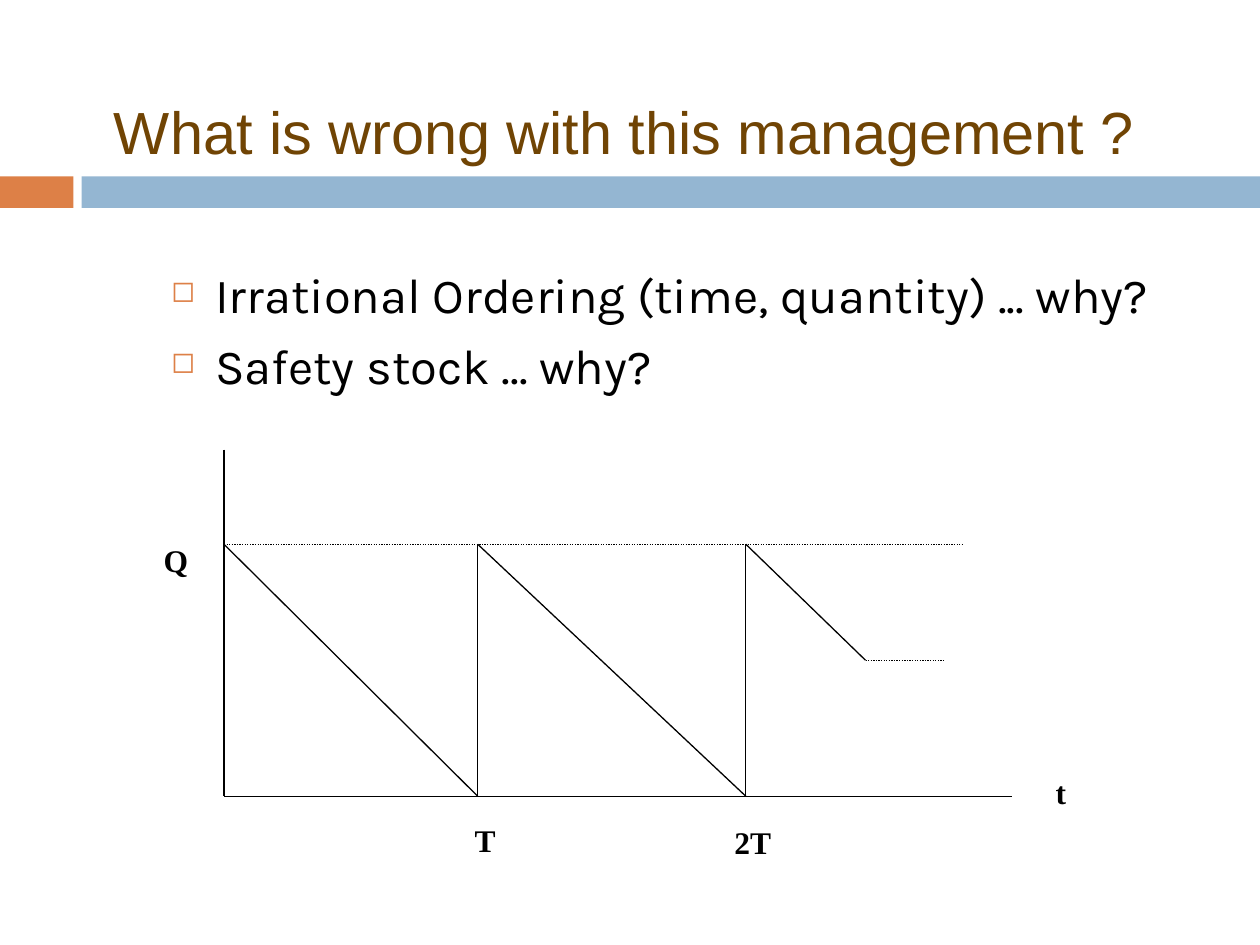
from lxml import etree
from pptx import Presentation
from pptx.dml.color import RGBColor
from pptx.enum import dml, shapes, text
from pptx.oxml import ns
from pptx.util import Pt

COLORS = {"accent": "DD8047", "band": "94B6D2", "title": "704404", "ink": "000000"}


def add_text(lines, left, top, width, height, font="Times New Roman", size=18,
             color="ink", bold=False, align=text.PP_ALIGN.CENTER, before=0, bullet=None):
    box = slide.shapes.add_textbox(Pt(left), Pt(top), Pt(width), Pt(height))
    frame = box.text_frame
    frame.word_wrap = True
    frame.text = lines
    for paragraph in frame.paragraphs:
        paragraph.alignment = align
        paragraph.space_before = Pt(before)
        for run in paragraph.runs:
            run.font.name = font
            run.font.size = Pt(size)
            run.font.bold = bold
            run.font.color.rgb = RGBColor.from_string(COLORS[color])
        if bullet:
            properties = paragraph._p.get_or_add_pPr()
            properties.set("marL", str(Pt(25.2)))
            properties.set("indent", str(Pt(-25.2)))
            marks = etree.fromstring(
                f'<a:marks {ns.nsdecls("a")}>'
                f'<a:buClr><a:srgbClr val="{COLORS["accent"]}"/></a:buClr>'
                f'<a:buSzPct val="60000"/><a:buChar char="{bullet}"/></a:marks>')
            properties.extend(list(marks))


presentation = Presentation()
presentation.slide_width, presentation.slide_height = Pt(720), Pt(540)
slide = presentation.slides.add_slide(presentation.slide_layouts[6])

for left, width, color in [(0, 42, "accent"), (46.6, 673.4, "band")]:
    shape = slide.shapes.add_shape(
        shapes.MSO_SHAPE.RECTANGLE, Pt(left), Pt(100.8), Pt(width), Pt(18))
    shape.shadow.inherit = False
    shape.fill.solid()
    shape.fill.fore_color.rgb = RGBColor.from_string(COLORS[color])
    shape.line.fill.background()

add_text("Irrational Ordering (time, quantity) ... why?\nSafety stock ... why?",
         90.7, 147.6, 612, 367.2, font="Karla", size=28,
         align=text.PP_ALIGN.JUSTIFY, before=7, bullet="◻")

origin, first_order, second_order = 128, 273, 426.2
axis_top, full_stock, empty_stock, last_stock = 257, 311, 455, 377.3
last_time = 494.6
solid_lines = [
    (origin, axis_top, origin, empty_stock),
    (origin, empty_stock, 578.2, empty_stock),
    (origin, full_stock, first_order, empty_stock),
    (first_order, empty_stock, first_order, full_stock),
    (first_order, full_stock, second_order, empty_stock),
    (second_order, empty_stock, second_order, full_stock),
    (second_order, full_stock, last_time, last_stock),
]
dotted_lines = [
    (origin, full_stock, 550.8, full_stock),
    (last_time, last_stock, 539.3, last_stock),
]
for ends in solid_lines + dotted_lines:
    connector = slide.shapes.add_connector(
        shapes.MSO_CONNECTOR.STRAIGHT, *[Pt(value) for value in ends])
    connector.line.color.rgb = RGBColor.from_string(COLORS["ink"])
    connector.line.width = Pt(0.75)
    if ends in dotted_lines:
        connector.line.dash_style = dml.MSO_LINE.ROUND_DOT
    etree.SubElement(connector._element.spPr, ns.qn("a:effectLst"))

for label, left, top, width in [
    ("Q", 85, 305.5, 31),
    ("T", 258.5, 465.5, 37.4),
    ("2T", 406.8, 466.8, 46.8),
    ("t", 586, 438, 40.3),
]:
    add_text(label, left, top, width, 28.8, bold=True)

add_text("What is wrong with this management ?", 50.4, 51, 612.7, 48.2,
         font="Arial", size=34, color="title")

presentation.save("out.pptx")
